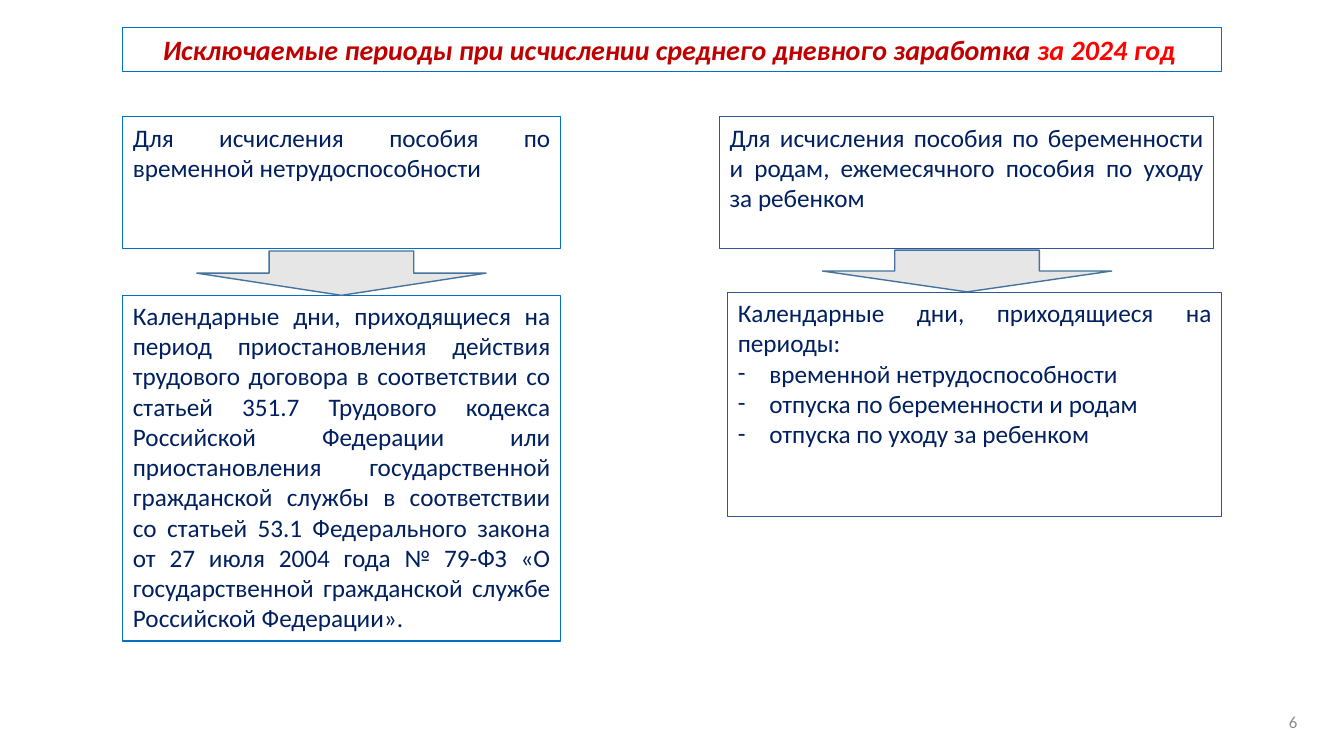
from dataclasses import dataclass
from typing import Optional

from lxml.etree import SubElement
from pptx import Presentation
from pptx.dml.color import RGBColor
from pptx.enum.shapes import MSO_SHAPE as Shape
from pptx.enum.text import MSO_ANCHOR as Anchor, MSO_AUTO_SIZE as AutoSize, PP_ALIGN as Align
from pptx.oxml.ns import qn
from pptx.util import Pt

COLORS = {
    "title": "C00000", "year": "FF0000", "text": "002060", "number": "8C8C8C",
    "left": "0070C0", "right": "2F5597", "arrow": "E7E6E6", "arrow_line": "43739E",
}
FONT = "Calibri"
INDENT = 22.5


@dataclass
class Run:
    text: str
    color: str = "text"
    size: float = 18
    strong: bool = False


@dataclass
class Para:
    runs: list[Run]
    align: Align = Align.JUSTIFY
    bullet: str = ""


@dataclass
class Box:
    left: float
    top: float
    width: float
    height: float
    paras: list[Para]
    line: Optional[str] = None
    anchor: Anchor = Anchor.TOP

    def bounds(self) -> tuple:
        return Pt(self.left), Pt(self.top), Pt(self.width), Pt(self.height)


@dataclass
class Arrow:
    left: float
    top: float
    height: float
    width: float = 206.6


def rgb(name: str) -> RGBColor:
    return RGBColor.from_string(COLORS[name])


def set_bullet(p, char: str) -> None:
    """Give the paragraph a hanging bullet, or none at all."""
    pPr = p._p.get_or_add_pPr()
    indent = Pt(INDENT) if char else 0
    pPr.set("marL", str(indent))
    pPr.set("indent", str(-indent))
    if char:
        SubElement(pPr, qn("a:buFont"), typeface=FONT)
        SubElement(pPr, qn("a:buChar"), char=char)
    else:
        SubElement(pPr, qn("a:buNone"))


def fill_box(s, box: Box) -> None:
    """Place, outline and fill a shape or placeholder with text."""
    s.left, s.top, s.width, s.height = box.bounds()
    if box.line:
        s.line.color.rgb = rgb(box.line)
        s.line.width = Pt(0.75)
    tf = s.text_frame
    tf.word_wrap = True
    tf.auto_size = AutoSize.NONE
    tf.vertical_anchor = box.anchor
    for i, para in enumerate(box.paras):
        p = tf.add_paragraph() if i else tf.paragraphs[0]
        p.alignment = para.align
        p.space_before = Pt(0)
        set_bullet(p, para.bullet)
        for run in para.runs:
            r = p.add_run()
            r.text = run.text
            r.font.name = FONT
            r.font.size = Pt(run.size)
            r.font.bold = r.font.italic = run.strong
            r.font.color.rgb = rgb(run.color)


def add_box(slide, box: Box) -> None:
    if box.line:
        s = slide.shapes.add_shape(Shape.RECTANGLE, *box.bounds())
        s.shadow.inherit = False
        s.fill.background()
    else:
        s = slide.shapes.add_textbox(*box.bounds())
    fill_box(s, box)


def add_arrow(slide, arrow: Arrow) -> None:
    s = slide.shapes.add_shape(Shape.DOWN_ARROW, Pt(arrow.left), Pt(arrow.top),
                               Pt(arrow.width), Pt(arrow.height))
    s.shadow.inherit = False
    s.fill.solid()
    s.fill.fore_color.rgb = rgb("arrow")
    s.line.color.rgb = rgb("arrow_line")
    s.line.width = Pt(1)


TITLE = Box(87.84, 19.44, 784.8, 31.68, [Para([
    Run("Исключаемые периоды при исчислении среднего дневного заработка ", "title", 20, True),
    Run("за 2024 год ", "year", 20, True),
], Align.CENTER)], "left")

PERIODS = Box(519.84, 208.8, 352.8, 159.84, [
    Para([Run("Календарные дни, приходящиеся на периоды:")]),
    *(Para([Run(period)], bullet="-") for period in (
        "временной нетрудоспособности",
        "отпуска по беременности и родам",
        "отпуска по уходу за ребенком",
    )),
], "right")

BOXES = [
    Box(87.84, 83.52, 312.48, 94.32, [Para([Run(
        "Для исчисления пособия по временной нетрудоспособности")])], "left"),
    Box(514.08, 83.52, 352.8, 94.32, [Para([Run(
        "Для исчисления пособия по беременности и родам, ежемесячного пособия "
        "по уходу за ребенком")])], "right"),
    Box(87.84, 210.96, 312.48, 246.96, [Para([Run(
        "Календарные дни, приходящиеся на период приостановления действия трудового "
        "договора в соответствии со статьей 351.7 Трудового кодекса Российской Федерации "
        "или приостановления государственной гражданской службы в соответствии со "
        "статьей 53.1 Федерального закона от 27 июля 2004 года № 79-ФЗ "
        "«О государственной гражданской службе Российской Федерации».")])], "left"),
    # Slide number
    Box(717.84, 501.12, 216, 28.8, [Para([Run("6", "number", 12)], Align.RIGHT)],
        anchor=Anchor.MIDDLE),
]

ARROWS = [Arrow(140.6, 179.28, 31.68), Arrow(587.5, 178.7, 29.8)]


def main() -> None:
    prs = Presentation()
    prs.slide_width, prs.slide_height = Pt(960), Pt(540)
    slide = prs.slides.add_slide(prs.slide_layouts[1])

    # Title and list of periods
    fill_box(slide.shapes.title, TITLE)
    fill_box(slide.placeholders[1], PERIODS)

    # Benefit boxes and arrows
    for box in BOXES:
        add_box(slide, box)
    for arrow in ARROWS:
        add_arrow(slide, arrow)

    prs.save("out.pptx")


if __name__ == "__main__":
    main()
